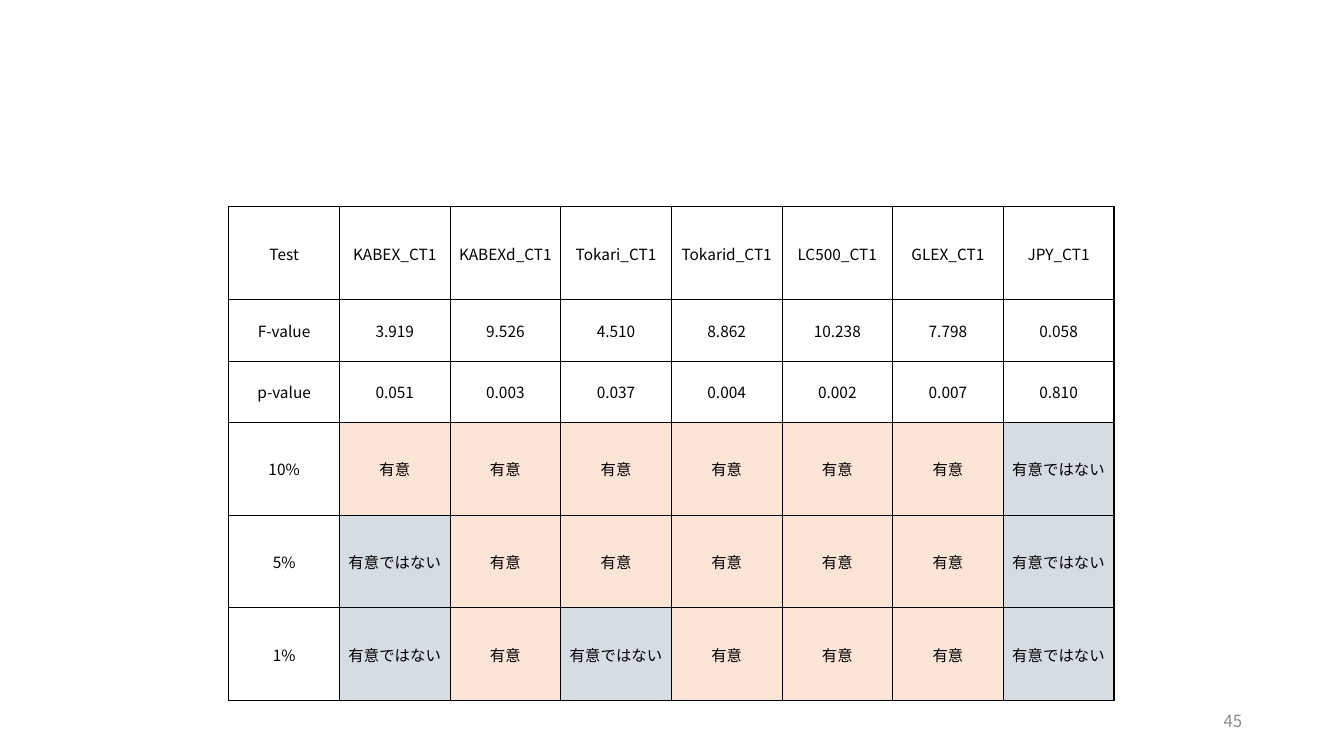
from lxml import etree
from pptx import Presentation
from pptx import util as u
from pptx.dml.color import RGBColor
from pptx.enum import text
from pptx.oxml import ns

# Content
YES, NO = "有意", "有意ではない"
ROWS = [
    ["Test", "KABEX_CT1", "KABEXd_CT1", "Tokari_CT1", "Tokarid_CT1", "LC500_CT1", "GLEX_CT1", "JPY_CT1"],
    ["F-value", "3.919", "9.526", "4.510", "8.862", "10.238", "7.798", "0.058"],
    ["p-value", "0.051", "0.003", "0.037", "0.004", "0.002", "0.007", "0.810"],
    ["10%", YES, YES, YES, YES, YES, YES, NO],
    ["5%", NO, YES, YES, YES, YES, YES, NO],
    ["1%", NO, YES, NO, YES, YES, YES, NO],
]
PAGE_NUMBER = "45"

# Format
FONT = "Noto Sans CJK JP"
FILLS = {YES: "FCE4D6", NO: "D6DCE4"}
TABLE_LEFT, TABLE_TOP, TABLE_WIDTH = 2.27, 2.05, 8.78
ROW_HEIGHTS = [0.92, 0.61, 0.61, 0.92, 0.92, 0.92]
INNER_LINE, OUTER_LINE = 0.5, 1
CELL_FORMAT = {
    "margin_left": u.Inches(0.01), "margin_top": u.Inches(0.01),
    "margin_right": u.Inches(0.01), "margin_bottom": 0,
    "vertical_anchor": text.MSO_ANCHOR.MIDDLE,
}


def color(value):
    return RGBColor.from_string(value)


def write(frame, words, size, ink, alignment):
    paragraph = frame.paragraphs[0]
    paragraph.alignment = alignment
    run = paragraph.add_run()
    run.text = words
    for name, value in {"size": u.Pt(size), "name": FONT}.items():
        setattr(run.font, name, value)
    run.font.color.rgb = color(ink)
    etree.SubElement(run.font._element, ns.qn("a:ea"), typeface=FONT)


def draw_borders(cell, widths):
    properties = cell._tc.get_or_add_tcPr()
    for position, (side, width) in enumerate(widths.items()):
        line = etree.Element(ns.qn("a:ln" + side), w=str(u.Pt(width)))
        fill = etree.SubElement(line, ns.qn("a:solidFill"))
        etree.SubElement(fill, ns.qn("a:srgbClr"), val="000000")
        properties.insert(position, line)


presentation = Presentation()
presentation.slide_width, presentation.slide_height = u.Inches(13.33), u.Inches(7.5)
slide = presentation.slides.add_slide(presentation.slide_layouts[6])

# Table of test results
last_row, last_column = len(ROWS) - 1, len(ROWS[0]) - 1
table = slide.shapes.add_table(
    len(ROWS), len(ROWS[0]), u.Inches(TABLE_LEFT), u.Inches(TABLE_TOP),
    u.Inches(TABLE_WIDTH), u.Inches(sum(ROW_HEIGHTS))).table
table.first_row = table.horz_banding = False
for column in table.columns:
    column.width = u.Inches(TABLE_WIDTH / len(ROWS[0]))
for row, height in zip(table.rows, ROW_HEIGHTS):
    row.height = u.Inches(height)

for i, labels in enumerate(ROWS):
    for j, label in enumerate(labels):
        cell = table.cell(i, j)
        for name, value in CELL_FORMAT.items():
            setattr(cell, name, value)
        if label in FILLS:
            cell.fill.solid()
            cell.fill.fore_color.rgb = color(FILLS[label])
        else:
            cell.fill.background()
        write(cell.text_frame, label, 11, "000000", text.PP_ALIGN.CENTER)
        at_edge = {"L": j == 0, "R": j == last_column, "T": i == 0, "B": i == last_row}
        draw_borders(cell, {side: OUTER_LINE if edge else INNER_LINE
                            for side, edge in at_edge.items()})

# Page number
number_box = slide.shapes.add_textbox(u.Inches(9.42), u.Inches(6.95), u.Inches(3), u.Inches(0.4))
number_box.text_frame.word_wrap = True
number_box.text_frame.vertical_anchor = text.MSO_ANCHOR.MIDDLE
write(number_box.text_frame, PAGE_NUMBER, 12, "8C8C8C", text.PP_ALIGN.RIGHT)

presentation.save("out.pptx")
